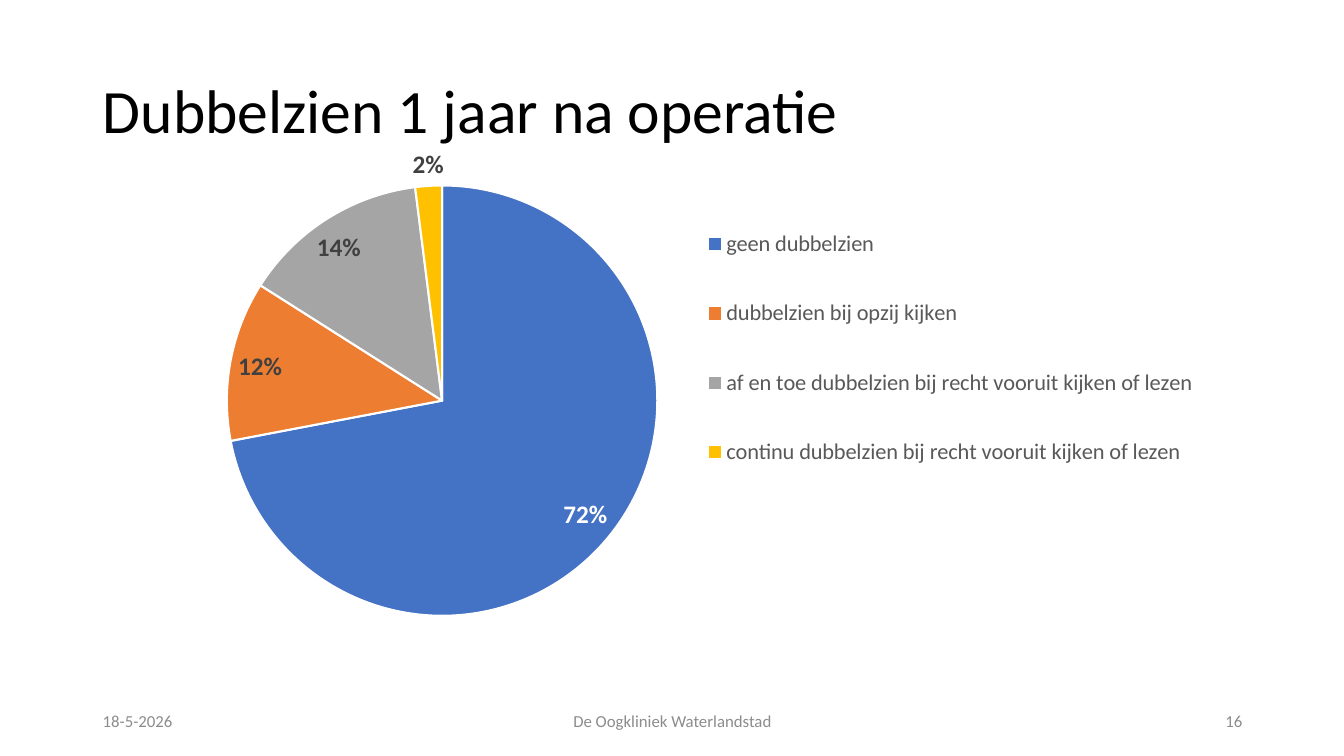
from dataclasses import dataclass

from lxml.etree import SubElement
from pptx import Presentation
from pptx.chart.data import CategoryChartData
from pptx.dml.color import RGBColor
from pptx.enum.chart import XL_CHART_TYPE, XL_LABEL_POSITION as LabelPosition, XL_LEGEND_POSITION
from pptx.enum.text import MSO_ANCHOR, PP_ALIGN as Align
from pptx.oxml import parse_xml
from pptx.oxml.ns import nsdecls, qn
from pptx.slide import Slide
from pptx.text.text import Font, TextFrame
from pptx.util import Inches, Pt

FONT_NAME = "Calibri"
BLACK = RGBColor(0x00, 0x00, 0x00)
WHITE = RGBColor(0xFF, 0xFF, 0xFF)
FOOTER_GRAY = RGBColor(0x8C, 0x8C, 0x8C)
LEGEND_GRAY = RGBColor(0x59, 0x59, 0x59)
LABEL_GRAY = RGBColor(0x40, 0x40, 0x40)
BLUE = RGBColor(0x44, 0x72, 0xC4)
ORANGE = RGBColor(0xED, 0x7D, 0x31)
GRAY = RGBColor(0xA5, 0xA5, 0xA5)
YELLOW = RGBColor(0xFF, 0xC0, 0x00)


@dataclass(frozen=True)
class Footer:
    text: str
    left: float
    width: float
    align: Align


@dataclass(frozen=True)
class Slice:
    category: str
    share: float
    color: RGBColor


@dataclass(frozen=True)
class Box:
    left: float
    top: float
    width: float
    height: float


FOOTERS = (
    Footer("18-5-2026", 0.92, 3, Align.LEFT),
    Footer("De Oogkliniek Waterlandstad", 4.42, 4.5, Align.CENTER),
    Footer("16", 9.42, 3, Align.RIGHT),
)
SLICES = (
    Slice("geen dubbelzien", 0.72, BLUE),
    Slice("dubbelzien bij opzij kijken", 0.12, ORANGE),
    Slice("af en toe dubbelzien bij recht vooruit kijken of lezen", 0.14, GRAY),
    Slice("continu dubbelzien bij recht vooruit kijken of lezen", 0.02, YELLOW),
)
CHART = Box(-3.55, 1.34, 15.88, 5.61)
PIE = Box(2.25, 1.84, 4.27, 4.27)
LEGEND = Box(6.95, 1.87, 4.95, 3.17)


def format_font(font: Font, size: float, color: RGBColor, bold: bool = False) -> None:
    font.name = FONT_NAME
    font.size = Pt(size)
    font.bold = bold
    font.color.rgb = color


def write_text(frame: TextFrame, text: str, *, size: float, color: RGBColor,
               align: Align = Align.LEFT, line_spacing: float = 1.0) -> None:
    frame.word_wrap = True
    frame.vertical_anchor = MSO_ANCHOR.MIDDLE
    paragraph = frame.paragraphs[0]
    paragraph.alignment = align
    paragraph.line_spacing = line_spacing
    run = paragraph.add_run()
    run.text = text
    format_font(run.font, size, color)


def add_title(slide: Slide) -> None:
    title = slide.shapes.title
    title.left, title.top = Inches(0.92), Inches(0.4)
    title.width, title.height = Inches(11.5), Inches(1.45)
    write_text(title.text_frame, "Dubbelzien 1 jaar na operatie",
               size=44, color=BLACK, line_spacing=0.9)


def add_footer(slide: Slide, footer: Footer) -> None:
    shape = slide.shapes.add_textbox(Inches(footer.left), Inches(6.95),
                                     Inches(footer.width), Inches(0.4))
    write_text(shape.text_frame, footer.text, size=12, color=FOOTER_GRAY, align=footer.align)


def set_layout(element, box: Box, inner: bool = False) -> None:
    """Place a chart part at a box given in slide inches."""
    for old_layout in element.findall(qn("c:layout")):
        element.remove(old_layout)
    layout = parse_xml(f"<c:layout {nsdecls('c')}><c:manualLayout/></c:layout>")
    settings = {"layoutTarget": "inner"} if inner else {}
    settings |= {
        "xMode": "edge",
        "yMode": "edge",
        "x": (box.left - CHART.left) / CHART.width,
        "y": (box.top - CHART.top) / CHART.height,
        "w": box.width / CHART.width,
        "h": box.height / CHART.height,
    }
    for name, value in settings.items():
        SubElement(layout[0], qn(f"c:{name}")).set("val", str(value))
    position = element.find(qn("c:legendPos"))
    element.insert(0 if position is None else element.index(position) + 1, layout)


def add_pie(slide: Slide) -> None:
    data = CategoryChartData(number_format="0%")
    data.categories = [part.category for part in SLICES]
    data.add_series("Series 1", [part.share for part in SLICES])
    chart = slide.shapes.add_chart(
        XL_CHART_TYPE.PIE, Inches(CHART.left), Inches(CHART.top),
        Inches(CHART.width), Inches(CHART.height), data).chart
    format_font(chart.font, 10, BLACK)
    chart.has_title = False

    chart.has_legend = True
    chart.legend.position = XL_LEGEND_POSITION.BOTTOM
    chart.legend.include_in_layout = False
    format_font(chart.legend.font, 16, LEGEND_GRAY)

    plot = chart.plots[0]
    plot.vary_by_categories = True
    series = plot.series[0]
    labels = series.data_labels
    labels.show_value = True
    labels.show_percentage = False
    labels.number_format = "0%"
    labels.number_format_is_linked = False
    labels.position = LabelPosition.BEST_FIT
    format_font(labels.font, 18, LABEL_GRAY, bold=True)
    for index, part in enumerate(SLICES):
        point = series.points[index]
        point.format.fill.solid()
        point.format.fill.fore_color.rgb = part.color
        point.format.line.color.rgb = WHITE
        point.format.line.width = Pt(1.5)
    largest_label = series.points[0].data_label
    format_font(largest_label.font, 18, WHITE, bold=True)
    largest_label.position = LabelPosition.BEST_FIT

    set_layout(chart.legend._element, LEGEND)
    set_layout(plot._element.getparent(), PIE, inner=True)


def main() -> None:
    presentation = Presentation()
    presentation.slide_width, presentation.slide_height = Inches(13.33), Inches(7.5)
    slide = presentation.slides.add_slide(presentation.slide_layouts[5])
    add_title(slide)
    for footer in FOOTERS:
        add_footer(slide, footer)
    add_pie(slide)
    presentation.save("out.pptx")


if __name__ == "__main__":
    main()
